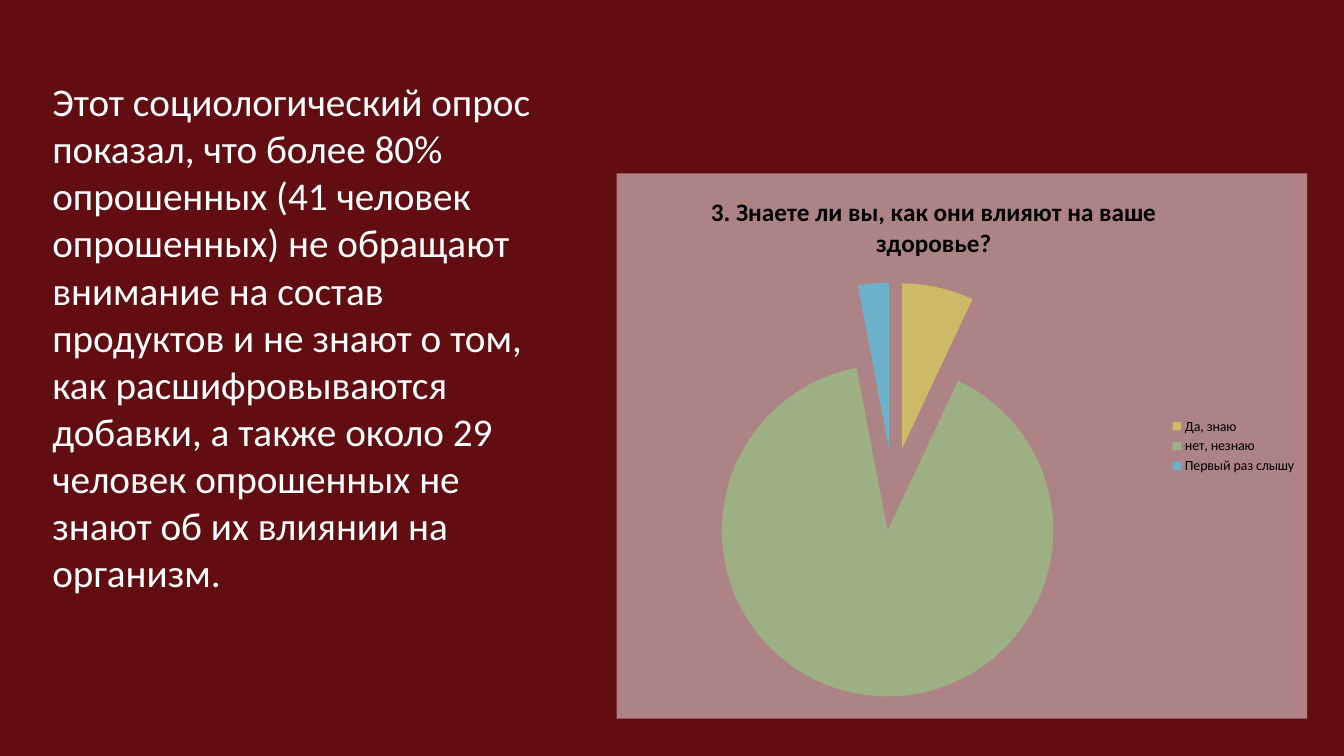
"""Build a survey slide with a conclusion and an exploded pie chart."""
from lxml import etree
from pptx import Presentation
from pptx import util as u
from pptx.chart.data import CategoryChartData
from pptx.dml.color import RGBColor
from pptx.enum import chart as ch, text
from pptx.oxml import ns, parse_xml

CONCLUSION = (
    "Этот социологический опрос показал, что более 80% опрошенных "
    "(41 человек опрошенных) не обращают внимание на состав продуктов и не "
    "знают о том, как расшифровываются добавки, а также около 29 человек "
    "опрошенных не знают об их влиянии на организм."
)
QUESTION = "3. Знаете ли вы, как они влияют на ваше здоровье?"
BURGUNDY = RGBColor(0x62, 0x0D, 0x12)
WHITE = RGBColor(0xFF, 0xFF, 0xFF)
BLACK = RGBColor(0, 0, 0)
ANSWERS = [
    ("Да, знаю", 7, RGBColor(0xCE, 0xB9, 0x66)),
    ("нет, незнаю", 90, RGBColor(0x9C, 0xB0, 0x84)),
    ("Первый раз слышу", 3, RGBColor(0x6B, 0xB1, 0xC9)),
]
TEXT_AREA = [u.Cm(n) for n in (1.07, 1.83, 13.23, 13.41)]
CHART_AREA = [u.Cm(n) for n in (15.54, 4.37, 17.4, 13.74)]
TITLE_PLACE = {"x": 0.13, "y": 0.03}
PIE_PLACE = {"x": 0.1, "y": 0.2, "w": 0.6, "h": 0.76}
FORMATS = {
    "conclusion": {"name": "Calibri", "size": u.Pt(28)},
    "chart": {"name": "Calibri", "size": u.Pt(10)},
    "title": {"name": "Calibri", "size": u.Pt(18), "bold": True},
}
EXPLOSION = 25
PANEL_FILL = (
    f'<c:spPr {ns.nsdecls("c", "a")}><a:solidFill><a:srgbClr val="FFFFFF">'
    '<a:alpha val="49000"/></a:srgbClr></a:solidFill>'
    "<a:ln><a:noFill/></a:ln></c:spPr>"
)


def style(font, kind, color):
    for name, value in FORMATS[kind].items():
        setattr(font, name, value)
    font.color.rgb = color


def make_layout(place, inner=False):
    layout = etree.Element(ns.qn("c:layout"))
    manual = etree.SubElement(layout, ns.qn("c:manualLayout"))
    settings = {"layoutTarget": "inner"} if inner else {}
    settings.update({"xMode": "edge", "yMode": "edge"}, **place)
    for name, value in settings.items():
        etree.SubElement(manual, ns.qn(f"c:{name}")).set("val", str(value))
    return layout


def add_conclusion(page):
    box = page.shapes.add_textbox(*TEXT_AREA)
    box.text_frame.word_wrap = True
    box.text_frame.auto_size = text.MSO_AUTO_SIZE.SHAPE_TO_FIT_TEXT
    span = box.text_frame.paragraphs[0].add_run()
    span.text = CONCLUSION
    style(span.font, "conclusion", WHITE)


def add_survey_chart(page):
    data = CategoryChartData()
    data.categories = [answer for answer, _, _ in ANSWERS]
    data.add_series(QUESTION, [share for _, share, _ in ANSWERS])
    chart = page.shapes.add_chart(ch.XL_CHART_TYPE.PIE, *CHART_AREA, data).chart
    style(chart.font, "chart", BLACK)

    chart.has_title = True
    title = chart.chart_title
    span = title.text_frame.paragraphs[0].add_run()
    span.text = QUESTION
    style(span.font, "title", BLACK)
    title.include_in_layout = False

    chart.has_legend = True
    chart.legend.position = ch.XL_LEGEND_POSITION.RIGHT
    chart.legend.include_in_layout = False
    style(chart.legend.font, "chart", BLACK)

    plot = chart.plots[0]
    plot.vary_by_categories = True
    series = plot.series[0]
    for index, (_, _, color) in enumerate(ANSWERS):
        fill = series.points[index].format.fill
        fill.solid()
        fill.fore_color.rgb = color
    explosion = etree.Element(ns.qn("c:explosion"))
    explosion.set("val", str(EXPLOSION))
    series._element.find(ns.qn("c:dPt")).addprevious(explosion)

    root = chart._chartSpace
    root.find(ns.qn("c:chart")).addnext(parse_xml(PANEL_FILL))
    heading = root.find(".//" + ns.qn("c:title"))
    plot_area = root.find(".//" + ns.qn("c:plotArea"))
    for parent in (heading, plot_area):
        for old in parent.findall(ns.qn("c:layout")):
            parent.remove(old)
    heading.find(ns.qn("c:tx")).addnext(make_layout(TITLE_PLACE))
    plot_area.insert(0, make_layout(PIE_PLACE, inner=True))


def main():
    deck = Presentation()
    deck.slide_width, deck.slide_height = u.Cm(33.87), u.Cm(19.05)
    page = deck.slides.add_slide(deck.slide_layouts[6])
    page.background.fill.solid()
    page.background.fill.fore_color.rgb = BURGUNDY
    add_conclusion(page)
    add_survey_chart(page)
    deck.save("out.pptx")


if __name__ == "__main__":
    main()
